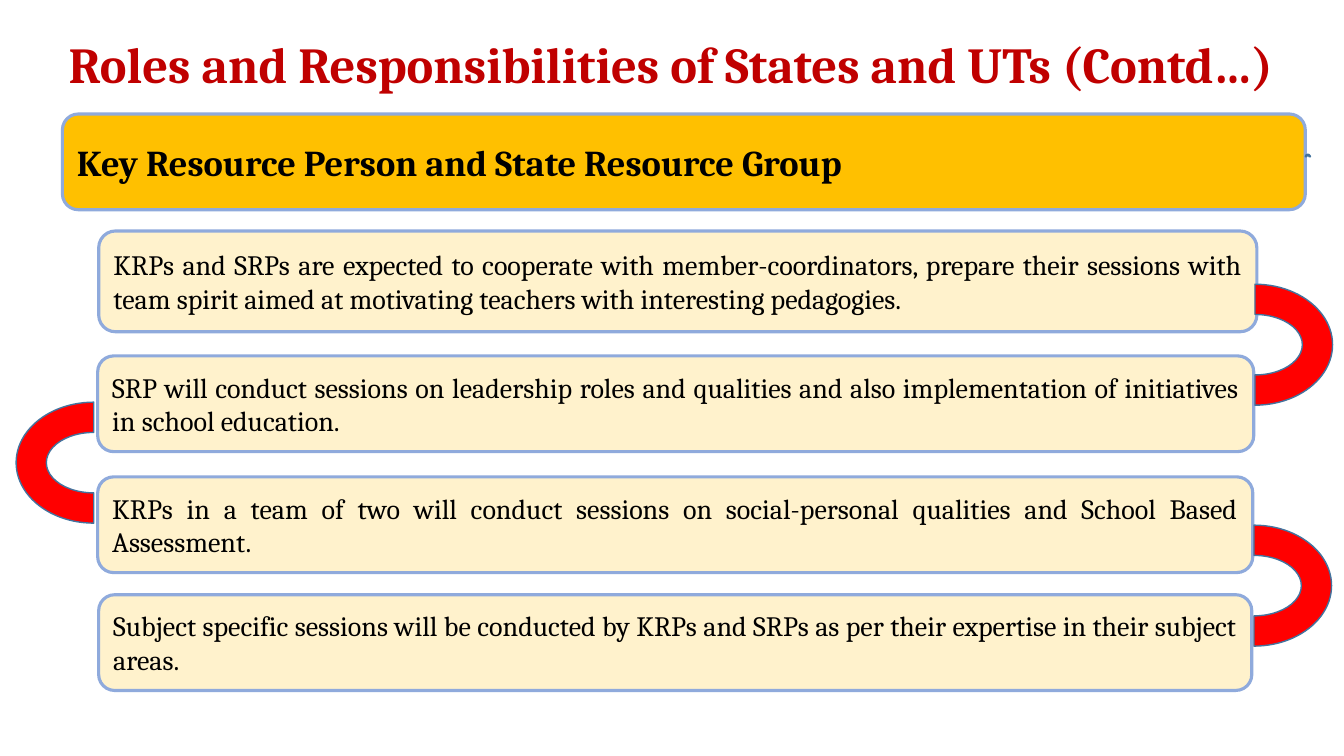
from pptx import Presentation
from pptx.dml.color import RGBColor
from pptx.enum.shapes import MSO_SHAPE
from pptx.enum.text import MSO_ANCHOR, MSO_AUTO_SIZE, PP_ALIGN
from pptx.util import Pt

HUES = {
    "title": "C00000", "text": "000000", "gold": "FFC000", "cream": "FFF2CC",
    "edge": "8FAADC", "red": "FF0000", "blue": "5B9BD5", "rim": "43739E",
}
FRAME = {"word_wrap": True, "auto_size": MSO_AUTO_SIZE.NONE,
         "vertical_anchor": MSO_ANCHOR.MIDDLE}
HEAD = {"name": "Cambria", "size": Pt(36), "bold": True}
BAND = {"name": "Cambria", "size": Pt(26), "bold": True}
BODY = {"name": "Cambria", "size": Pt(20), "bold": False}

# Left, top, width, height and text of each role
ROLES = [
    (70.5, 165, 827.3, 72,
     "KRPs and SRPs are expected to cooperate with member-coordinators, "
     "prepare their sessions with team spirit aimed at motivating teachers "
     "with interesting pedagogies."),
    (69.8, 254.2, 825.8, 68.4,
     "SRP will conduct sessions on leadership roles and qualities and also "
     "implementation of initiatives in school education."),
    (69.8, 340.6, 825.1, 68.4,
     "KRPs in a team of two will conduct sessions on social-personal "
     "qualities and School Based Assessment."),
    (70.5, 424.8, 823.7, 68.4,
     "Subject specific sessions will be conducted by KRPs and SRPs as per "
     "their expertise in their subject areas."),
]
# Left, top and turn of each link between roles
LINKS = [(853.2, 190.8, 90), (852.5, 362.9, 90), (23.8, 275, 270)]


def tint(name):
    return RGBColor.from_string(HUES[name])


def apply(item, values):
    for key, value in values.items():
        setattr(item, key, value)


def write(shape, text, font, hue, align):
    frame = shape.text_frame
    apply(frame, FRAME)
    para = frame.paragraphs[0]
    para.alignment = align
    run = para.add_run()
    run.text = text
    apply(run.font, font)
    run.font.color.rgb = tint(hue)
    return para


def draw(slide, kind, box, fill, edge, width):
    shape = slide.shapes.add_shape(kind, *map(Pt, box))
    shape.shadow.inherit = False
    shape.fill.solid()
    shape.fill.fore_color.rgb = tint(fill)
    shape.line.color.rgb = tint(edge)
    shape.line.width = Pt(width)
    return shape


def add_title(slide, box, text):
    title = slide.shapes.title
    apply(title, dict(zip(("left", "top", "width", "height"), map(Pt, box))))
    para = write(title, text, HEAD, "title", PP_ALIGN.LEFT)
    para.line_spacing = 0.9


def add_panel(slide, box, text, fill, font, align):
    panel = draw(slide, MSO_SHAPE.ROUNDED_RECTANGLE, box, fill, "edge", 2.25)
    write(panel, text, font, "text", align)


def add_arc(slide, box, fill, turn=0):
    arc = draw(slide, MSO_SHAPE.BLOCK_ARC, box, fill, "rim", 1)
    arc.rotation = turn


def main():
    deck = Presentation()
    apply(deck, {"slide_width": Pt(960), "slide_height": Pt(540)})
    slide = deck.slides.add_slide(deck.slide_layouts[5])

    # Title and banner
    add_title(slide, (41.8, 16.6, 907.9, 62.6),
              "Roles and Responsibilities of States and UTs (Contd…)")
    add_panel(slide, (44.6, 81.4, 887.8, 68.4),
              "Key Resource Person and State Resource Group",
              "gold", BAND, PP_ALIGN.LEFT)

    # Roles
    for *box, text in ROLES:
        add_panel(slide, box, text, "cream", BODY, PP_ALIGN.JUSTIFY)

    # Small arc by the banner, then the links
    add_arc(slide, (932.4, 110.2, 3.6, 3.6), "blue")
    for left, top, turn in LINKS:
        add_arc(slide, (left, top, 86.4, 110.9), "red", turn)

    deck.save("out.pptx")


if __name__ == "__main__":
    main()
